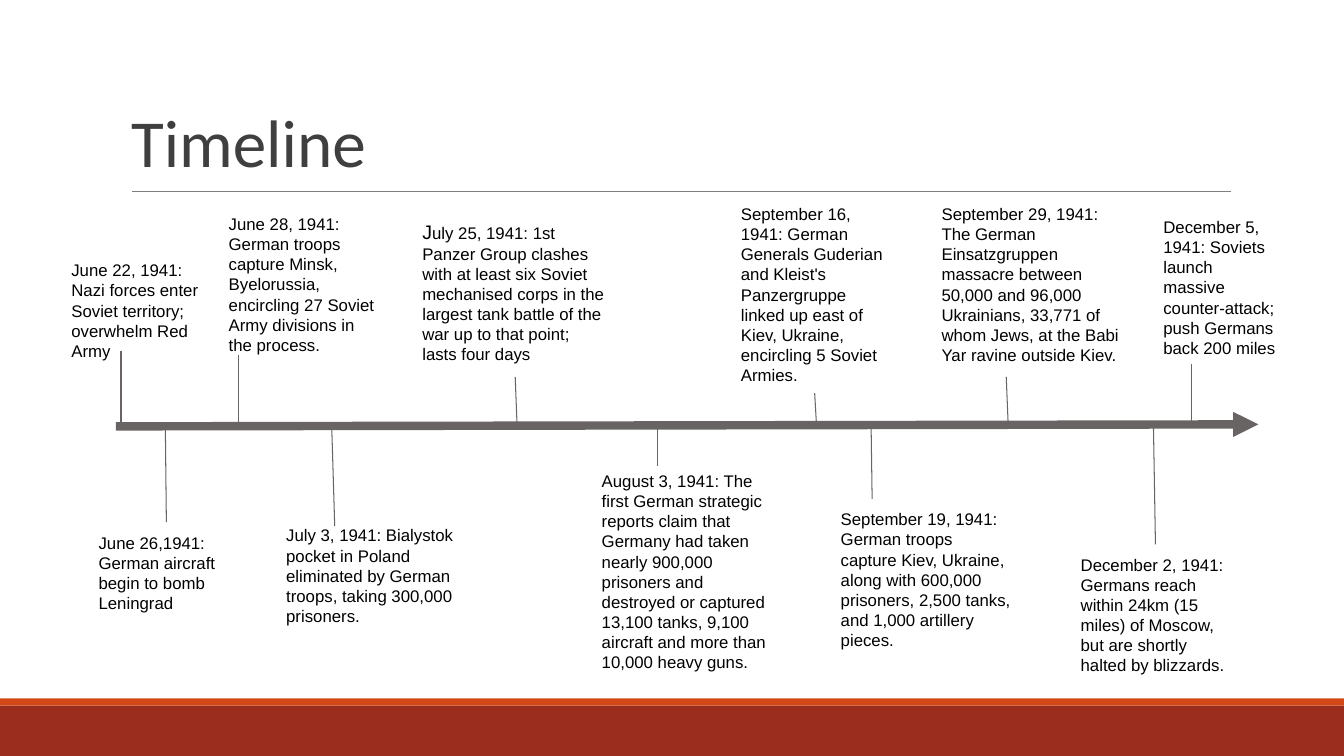
from dataclasses import dataclass

from pptx import Presentation
from pptx.dml.color import RGBColor
from pptx.enum import shapes as sh, text as tx
from pptx.oxml import parse_xml
from pptx.oxml.ns import nsdecls, qn
from pptx.util import Inches, Pt

Box = tuple[float, float, float, float]
GREY, BLACK, WHITE = "696464", "000000", "FFFFFF"
PAD = Inches(0.1)


@dataclass
class Event:
    text: str
    box: Box
    stem: Box  # x and y of both ends
    lead: int = 0  # size of a larger first letter, in a framed box


@dataclass
class Band:
    box: Box
    fill: str


EVENTS = [
    Event("June 22, 1941: Nazi forces enter Soviet territory; overwhelm Red Army",
          (0.61, 2.48, 1.53, 1.53), (1.2, 3.48, 1.2, 4.23)),
    Event("June 26,1941: German aircraft begin to bomb Leningrad",
          (0.88, 5.18, 1.53, 1.08), (1.64, 4.22, 1.65, 5.18)),
    Event("June 28, 1941: German troops capture Minsk, Byelorussia, encircling "
          "27 Soviet Army divisions in the process.",
          (2.17, 2.02, 1.67, 1.53), (2.37, 3.52, 2.37, 4.22)),
    Event("July 3, 1941: Bialystok pocket in Poland eliminated by German troops, "
          "taking 300,000 prisoners.",
          (2.74, 5.11, 1.9, 1.21), (3.29, 4.22, 3.32, 5.22)),
    Event("July 25, 1941: 1st Panzer Group clashes with at least six Soviet "
          "mechanised corps in the largest tank battle of the war up to that "
          "point; lasts four days",
          (4.09, 2.08, 2.04, 1.65), (5.11, 3.74, 5.13, 4.26), lead=14),
    Event("August 3, 1941: The first German strategic reports claim that Germany "
          "had taken nearly 900,000 prisoners and destroyed or captured 13,100 "
          "tanks, 9,100 aircraft and more than 10,000 heavy guns.",
          (5.87, 4.57, 1.9, 2.3), (6.52, 4.21, 6.52, 4.62)),
    Event("September 16, 1941: German Generals Guderian and Kleist's Panzergruppe "
          "linked up east of Kiev, Ukraine, encircling 5 Soviet Armies.",
          (7.25, 1.92, 1.67, 1.98), (8.08, 3.9, 8.1, 4.25)),
    Event("September 19, 1941: German troops capture Kiev, Ukraine, along with "
          "600,000 prisoners, 2,500 tanks, and 1,000 artillery pieces.",
          (8.24, 4.95, 1.9, 1.53), (8.65, 4.95, 8.64, 4.23)),
    Event("September 29, 1941: The German Einsatzgruppen massacre between 50,000 "
          "and 96,000 Ukrainians, 33,771 of whom Jews, at the Babi Yar ravine "
          "outside Kiev.",
          (9.24, 1.92, 1.98, 1.98), (9.98, 3.74, 10, 4.23)),
    Event("December 2, 1941: Germans reach within 24km (15 miles) of Moscow, but "
          "are shortly halted by blizzards.",
          (10.62, 5.4, 1.67, 1.08), (11.46, 5.4, 11.44, 4.21)),
    Event("December 5, 1941: Soviets launch massive counter-attack; push Germans "
          "back 200 miles",
          (11.44, 2.05, 1.34, 1.41), (11.82, 3.61, 11.82, 4.22)),
]
BANDS = [Band((0, 7, 13.33, 0.5), "9B2D1F"), Band((0, 6.93, 13.33, 0.07), "D34817")]


def paint(part, hue: str) -> None:
    """Give a fill or a line fill a solid colour."""
    part.solid()
    part.fore_color.rgb = RGBColor.from_string(hue)


def setup(frame, anchor=tx.MSO_ANCHOR.TOP):
    """Set wrap, anchor and margins; return the first paragraph."""
    form = dict(word_wrap=True, auto_size=tx.MSO_AUTO_SIZE.NONE,
                vertical_anchor=anchor, margin_left=PAD, margin_right=PAD,
                margin_top=PAD, margin_bottom=PAD)
    for key, val in form.items():
        setattr(frame, key, val)
    para = frame.paragraphs[0]
    para.alignment = tx.PP_ALIGN.LEFT
    return para


def write(para, words: str, size: int, font: str = "Arial", hue: str = BLACK) -> None:
    run = para.add_run()
    run.text = words
    for key, val in dict(name=font, size=Pt(size), bold=False).items():
        setattr(run.font, key, val)
    paint(run.font.fill, hue)


def add_title(slide, words: str) -> None:
    title = slide.shapes.title
    form = dict(left=1.2, top=0.31, width=11, height=1.59)
    for key, val in form.items():
        setattr(title, key, Inches(val))
    para = setup(title.text_frame, tx.MSO_ANCHOR.BOTTOM)
    para.line_spacing = 0.85
    write(para, words, 48, "Calibri", "3F3F3F")


def add_rect(slide, box: Box):
    rect = slide.shapes.add_shape(sh.MSO_SHAPE.RECTANGLE, *map(Inches, box))
    rect.shadow.inherit = False
    return rect


def add_band(slide, band: Band) -> None:
    rect = add_rect(slide, band.box)
    paint(rect.fill, band.fill)
    rect.line.fill.background()


def add_line(slide, ends: Box, hue: str = GREY, width: float = 0.75,
             arrow: bool = False) -> None:
    line = slide.shapes.add_connector(sh.MSO_CONNECTOR.STRAIGHT, *map(Inches, ends))
    paint(line.line.fill, hue)
    line.line.width = Pt(width)
    props = line._element.spPr
    if arrow:
        props.find(qn("a:ln")).append(
            parse_xml(f'<a:tailEnd {nsdecls("a")} type="triangle"/>'))
    props.append(parse_xml(f'<a:effectLst {nsdecls("a")}/>'))


def add_event(slide, event: Event) -> None:
    if event.lead:
        note = add_rect(slide, event.box)
        note.fill.background()
        paint(note.line.fill, WHITE)
        note.line.width = Pt(0.75)
    else:
        note = slide.shapes.add_textbox(*map(Inches, event.box))
    para = setup(note.text_frame)
    words = event.text
    if event.lead:
        write(para, words[0], event.lead)
        words = words[1:]
    write(para, words, 12)


def main() -> None:
    deck = Presentation()
    deck.slide_width, deck.slide_height = Inches(13.33), Inches(7.5)
    slide = deck.slides.add_slide(deck.slide_layouts.get_by_name("Title Only"))
    for band in BANDS:
        add_band(slide, band)
    add_line(slide, (1.31, 1.9, 12.21, 1.9), "7F7F7F")
    add_title(slide, "Timeline")
    add_line(slide, (1.15, 4.23, 12.48, 4.21), width=6, arrow=True)
    for event in EVENTS:
        add_event(slide, event)
    for event in EVENTS:
        add_line(slide, event.stem)
    deck.save("out.pptx")


if __name__ == "__main__":
    main()
